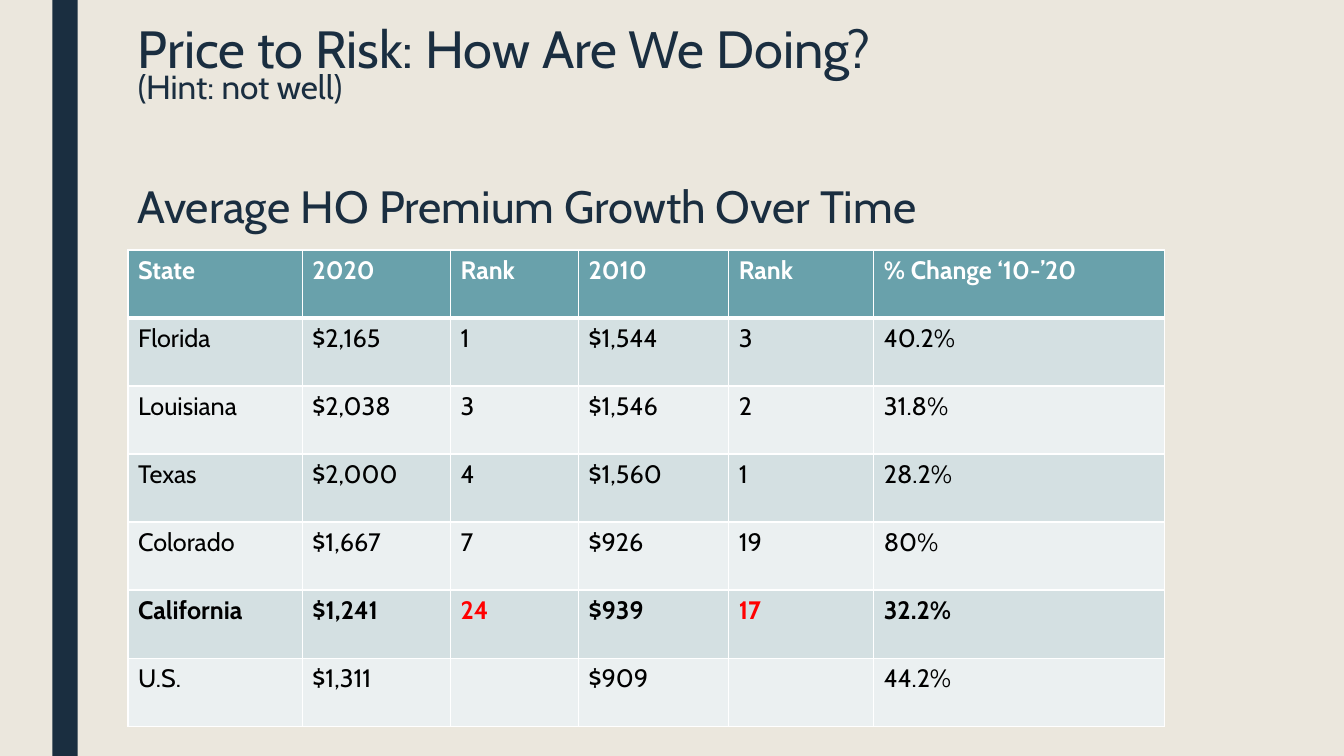
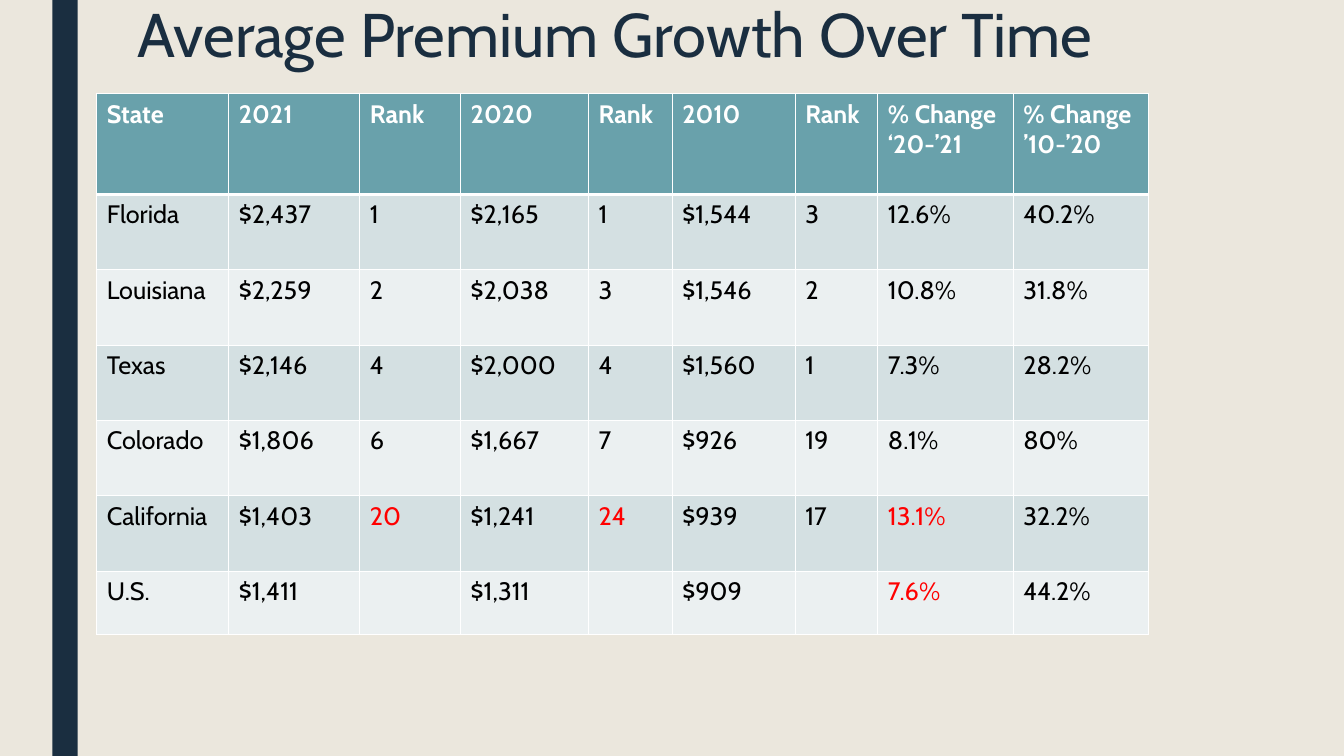
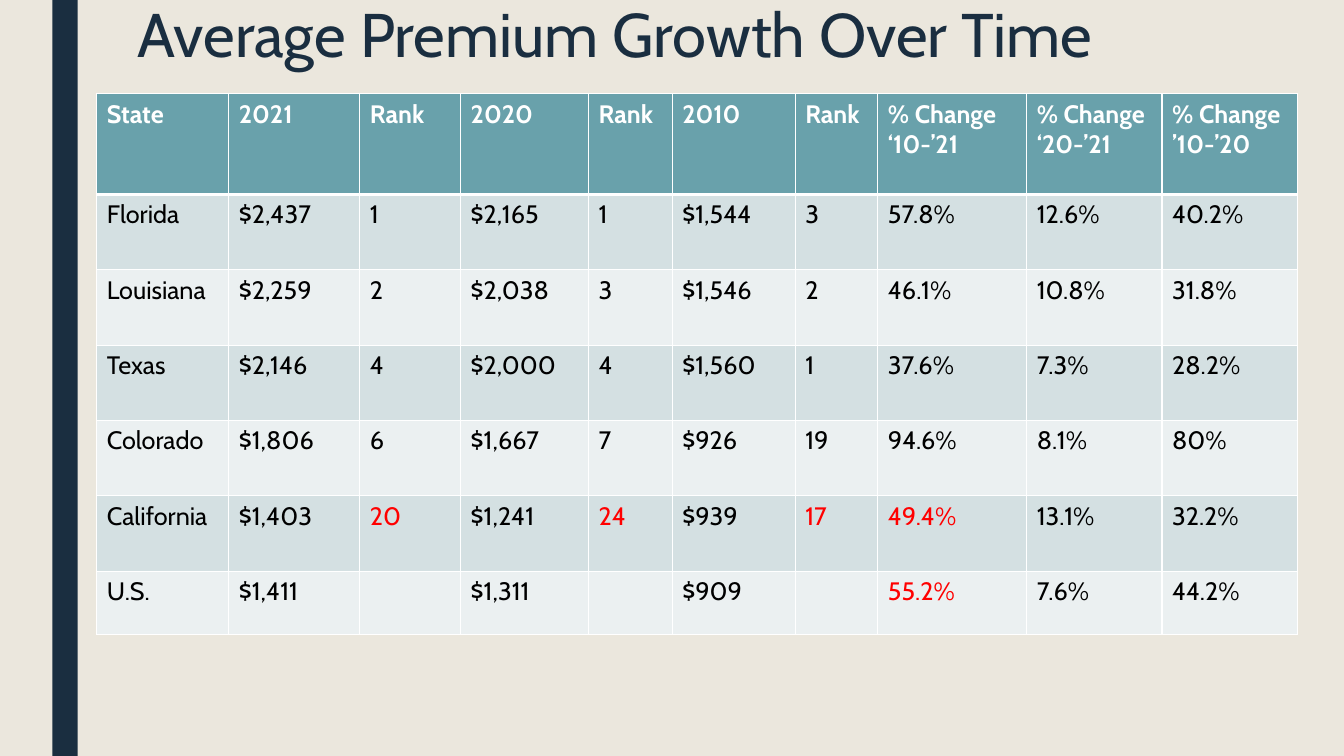
from dataclasses import dataclass

from lxml.etree import SubElement
from pptx import Presentation
from pptx.dml.color import RGBColor
from pptx.enum.shapes import MSO_SHAPE as Shape
from pptx.enum.text import MSO_ANCHOR as Anchor, PP_ALIGN as Align
from pptx.oxml.ns import qn
from pptx.util import Inches, Pt


@dataclass(frozen=True)
class Theme:
    font: str = "Cabin"
    paper: str = "EBE7DD"
    navy: str = "1A2E40"
    header: str = "69A1AB"
    bands: tuple = ("D4E0E2", "EBF0F1")
    white: str = "FFFFFF"
    black: str = "000000"
    red: str = "FF0000"
    title_size: float = 44
    long_title_size: float = 37.4
    subtitle_size: float = 32.3
    hint_size: float = 23.8
    table_size: float = 18
    rule: float = 1
    header_rule: float = 3


STATES = ["Florida", "Louisiana", "Texas", "Colorado", "California", "U.S."]
FIGURES = {
    "state": STATES,
    "2021": ["$2,437", "$2,259", "$2,146", "$1,806", "$1,403", "$1,411"],
    "rank 2021": ["1", "2", "4", "6", "20", ""],
    "2020": ["$2,165", "$2,038", "$2,000", "$1,667", "$1,241", "$1,311"],
    "rank 2020": ["1", "3", "4", "7", "24", ""],
    "2010": ["$1,544", "$1,546", "$1,560", "$926", "$939", "$909"],
    "rank 2010": ["3", "2", "1", "19", "17", ""],
    "10-21": ["57.8%", "46.1%", "37.6%", "94.6%", "49.4%", "55.2%"],
    "20-21": ["12.6%", "10.8%", "7.3%", "8.1%", "13.1%", "7.6%"],
    "10-20": ["40.2%", "31.8%", "28.2%", "80%", "32.2%", "44.2%"],
}

# Each column: heading, key into FIGURES, width in grid columns.
TEN_YEAR_COLUMNS = [
    ("State", "state", 5.19), ("2020", "2020", 4.41), ("Rank", "rank 2020", 3.81),
    ("2010", "2010", 4.47), ("Rank", "rank 2010", 4.32), ("% Change ‘10-’20", "10-20", 8.64),
]
YEAR_COLUMNS = [
    ("State", "state", 3.93), ("2021", "2021", 3.9), ("Rank", "rank 2021", 3),
    ("2020", "2020", 3.81), ("Rank", "rank 2020", 2.49),
    ("2010", "2010", 3.66), ("Rank", "rank 2010", 2.46),
]
SINCE_2010 = ("% Change ‘10-’21", "10-21", 4.43)
CHANGE_COLUMNS = [("% Change ‘20-’21", "20-21", 4.03), ("% Change ’10-’20", "10-20", 4.03)]
GROWTH_ROWS = [4] + [2.99] * 5 + [2.52]


class Slides:
    """Holds the theme and the current page; lengths are grid columns and rows."""

    columns, rows = 40, 30

    def __init__(self, theme):
        self.theme = theme
        self.deck = Presentation()
        self.deck.slide_width, self.deck.slide_height = Inches(13.33), Inches(7.5)
        self.paint(self.deck.slide_master.background.fill, theme.paper)

    def across(self, count):
        return round(self.deck.slide_width * count / self.columns)

    def down(self, count):
        return round(self.deck.slide_height * count / self.rows)

    def place(self, left, top, width, height):
        return self.across(left), self.down(top), self.across(width), self.down(height)

    def paint(self, fill, color):
        fill.solid()
        fill.fore_color.rgb = RGBColor.from_string(color)

    def start_page(self):
        self.page = self.deck.slides.add_slide(self.deck.slide_layouts[6])
        band = self.page.shapes.add_shape(Shape.RECTANGLE, *self.place(1.56, 0, 0.75, self.rows))
        band.shadow.inherit = False
        self.paint(band.fill, self.theme.navy)
        band.line.fill.background()

    def set_text(self, para, text, size, color, bold=False):
        para.text = text
        para.alignment = Align.LEFT
        for span in para.runs:
            span.font.name, span.font.size, span.font.bold = self.theme.font, Pt(size), bold
            span.font.color.rgb = RGBColor.from_string(color)

    def title(self, lines, top, height, spacing):
        """Add a title from lines of (text, size, points of space before)."""
        frame = self.page.shapes.add_textbox(*self.place(3.81, top, 30.4, height)).text_frame
        frame.word_wrap = True
        frame.vertical_anchor = Anchor.TOP
        frame.text = "\n".join(text for text, _, _ in lines)
        for para, (text, size, gap) in zip(frame.paragraphs, lines):
            self.set_text(para, text, size, self.theme.navy)
            para.line_spacing = spacing
            para.space_before = Pt(gap)

    def borders(self, cell, **widths):
        """Draw white rules; the fill must be set afterwards to keep the XML order."""
        properties = cell._tc.get_or_add_tcPr()
        for side in ("L", "R", "T", "B"):
            width = widths.get(side, self.theme.rule)
            line = SubElement(properties, qn(f"a:ln{side}"), w=str(Pt(width)))
            solid = SubElement(line, qn("a:solidFill"))
            SubElement(solid, qn("a:srgbClr"), val=self.theme.white)

    def table(self, left, top, columns, heights, red=(), bold_state=None):
        """Fill a table from FIGURES; red lists the (state, key) cells to stress."""
        theme = self.theme
        width = sum(column[2] for column in columns)
        grid = self.page.shapes.add_table(
            len(heights), len(columns), *self.place(left, top, width, sum(heights))).table
        for row, height in zip(grid.rows, heights):
            row.height = self.down(height)
        for x, (heading, key, column_width) in enumerate(columns):
            grid.columns[x].width = self.across(column_width)
            head = grid.cell(0, x)
            self.borders(head, B=theme.header_rule)
            self.paint(head.fill, theme.header)
            self.set_text(head.text_frame.paragraphs[0], heading, theme.table_size,
                          theme.white, True)
            for y, (state, value) in enumerate(zip(STATES, FIGURES[key])):
                cell = grid.cell(y + 1, x)
                self.borders(cell, T=theme.rule if y else theme.header_rule)
                self.paint(cell.fill, theme.bands[y % 2])
                color = theme.red if (state, key) in red else theme.black
                self.set_text(cell.text_frame.paragraphs[0], value, theme.table_size, color,
                              state == bold_state)

    def growth_page(self, columns, red):
        self.start_page()
        self.title([("Average Premium Growth Over Time", self.theme.title_size, 0)], 0, 3.72, 0.89)
        self.table(2.88, 3.72, columns, GROWTH_ROWS, red)


def main():
    theme = Theme()
    slides = Slides(theme)

    slides.start_page()
    slides.title([
        ("Price to Risk: How Are We Doing?", theme.long_title_size, 0),
        ("(Hint: not well)", theme.hint_size, 0),
        ("Average HO Premium Growth Over Time", theme.subtitle_size, 63),
    ], 1.16, 8.16, 0.69)
    ranks = {("California", "rank 2020"), ("California", "rank 2010")}
    slides.table(3.81, 9.92, TEN_YEAR_COLUMNS, [2.7] * 7, ranks, "California")

    recent = {("California", "rank 2021"), ("California", "rank 2020")}
    slides.growth_page(YEAR_COLUMNS + CHANGE_COLUMNS,
                       recent | {("California", "20-21"), ("U.S.", "20-21")})
    slides.growth_page(YEAR_COLUMNS + [SINCE_2010] + CHANGE_COLUMNS,
                       recent | ranks | {("California", "10-21"), ("U.S.", "10-21")})

    slides.deck.save("out.pptx")


if __name__ == "__main__":
    main()
